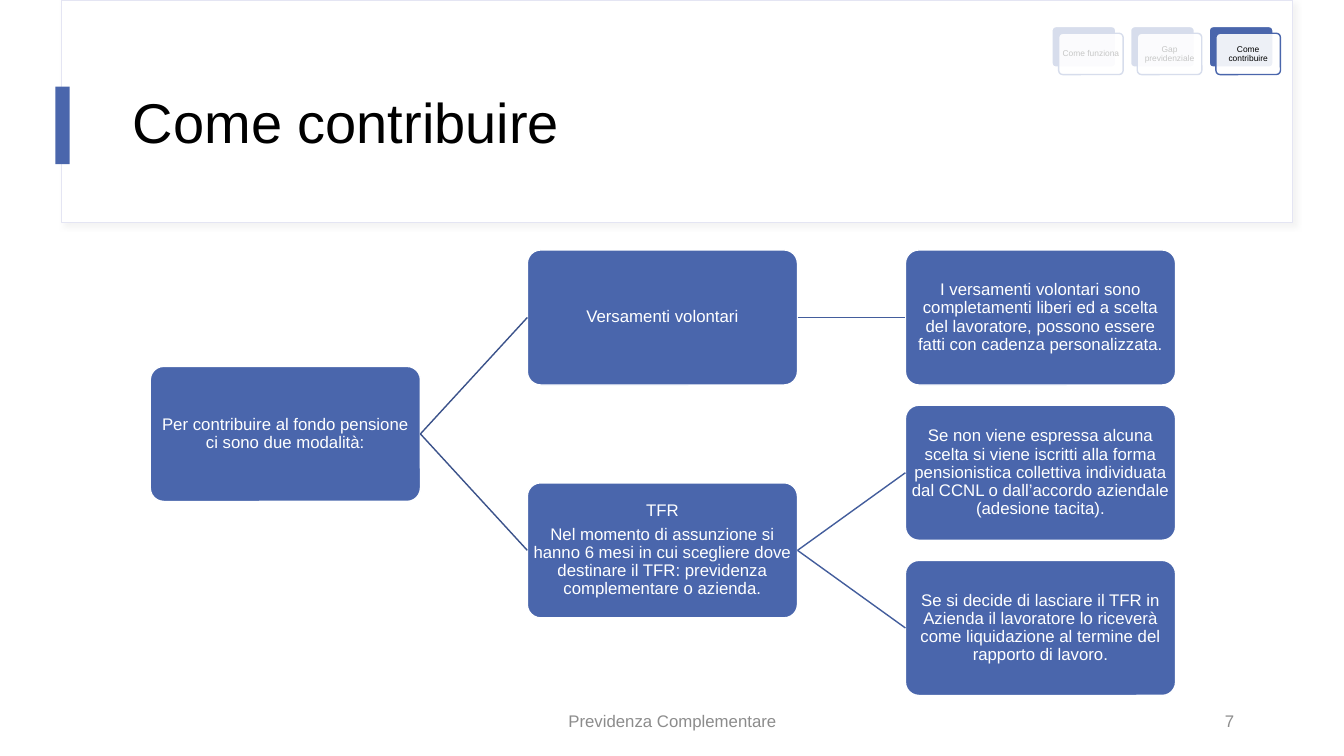
import dataclasses
import typing

import lxml.etree
import pptx
import pptx.dml.color
import pptx.enum.shapes
import pptx.enum.text
import pptx.oxml
import pptx.oxml.ns
import pptx.util

Inches = pptx.util.Inches
Shapes = pptx.enum.shapes.MSO_SHAPE
Align = pptx.enum.text.PP_ALIGN


@dataclasses.dataclass(frozen=True)
class Theme:
    font: str = "Arial"
    blue: str = "4A66AC"
    white: str = "FFFFFF"
    black: str = "000000"
    gray: str = "8C8C8C"
    frame: str = "E4E5F3"
    shadow: str = "D9D9D9"
    first_link: str = "3B528A"
    second_link: str = "435D9C"
    title_size: float = 40
    body_size: float = 12
    tab_size: float = 6


@dataclasses.dataclass(frozen=True)
class Box:
    left: float
    top: float
    width: float
    height: float

    def lengths(self) -> tuple[int, ...]:
        return tuple(Inches(value) for value in dataclasses.astuple(self))


@dataclasses.dataclass(frozen=True)
class Node:
    column: int
    row: float
    paragraphs: tuple[str, ...]
    parent: typing.Optional[int] = None


THEME = Theme()
COLUMN_LEFTS = (1.49, 5.23, 8.98)
LINK_COLORS = (THEME.first_link, THEME.second_link)
NODE_TOP, ROW_PITCH = 2.48, 1.54
NODE_WIDTH, NODE_HEIGHT = 2.68, 1.34
TAB_LEFT, TAB_TOP, TAB_PITCH = 10.43, 0.26, 0.78
TAB_WIDTH, TAB_HEIGHT, TAB_OFFSET = 0.64, 0.41, 0.07
TABS = ("Come funziona", "Gap previdenziale", "Come contribuire")
NODES = (
    Node(0, 0.75, ("Per contribuire al fondo pensione ci sono due modalità:",)),
    Node(1, 0, ("Versamenti volontari",), 0),
    Node(1, 1.5, (
        "TFR",
        "Nel momento di assunzione si hanno 6 mesi in cui scegliere dove "
        "destinare il TFR: previdenza complementare o azienda.",
    ), 0),
    Node(2, 0, (
        "I versamenti volontari sono completamenti liberi ed a scelta del "
        "lavoratore, possono essere fatti con cadenza personalizzata.",
    ), 1),
    Node(2, 1, (
        "Se non viene espressa alcuna scelta si viene iscritti alla forma "
        "pensionistica collettiva individuata dal CCNL o dall’accordo "
        "aziendale (adesione tacita).",
    ), 2),
    Node(2, 2, (
        "Se si decide di lasciare il TFR in Azienda il lavoratore lo riceverà "
        "come liquidazione al termine del rapporto di lavoro.",
    ), 2),
)


def rgb(color: str) -> pptx.dml.color.RGBColor:
    return pptx.dml.color.RGBColor.from_string(color)


def set_text(shape, paragraphs: tuple[str, ...], *, size: float, color: str,
             align=Align.CENTER, inset: typing.Optional[float] = None,
             line_spacing: float = 1.0, space_after: float = 0) -> None:
    frame = shape.text_frame
    frame.word_wrap = True
    frame.vertical_anchor = pptx.enum.text.MSO_ANCHOR.MIDDLE
    if inset is not None:
        frame.margin_left = frame.margin_right = Inches(inset)
        frame.margin_top = frame.margin_bottom = Inches(inset)
    for index, text in enumerate(paragraphs):
        paragraph = frame.add_paragraph() if index else frame.paragraphs[0]
        paragraph.alignment = align
        paragraph.line_spacing = line_spacing
        if index < len(paragraphs) - 1:
            paragraph.space_after = pptx.util.Pt(space_after)
        run = paragraph.add_run()
        run.text = text
        run.font.name = THEME.font
        run.font.size = pptx.util.Pt(size)
        run.font.color.rgb = rgb(color)


def add_box(slide, box: Box, fill: str, *, kind=Shapes.RECTANGLE,
            line: typing.Optional[str] = None, line_width: float = 1,
            opacity: int = 100):
    shape = slide.shapes.add_shape(kind, *box.lengths())
    shape.shadow.inherit = False
    if kind == Shapes.ROUNDED_RECTANGLE:
        shape.adjustments[0] = 0.1
    shape.fill.solid()
    shape.fill.fore_color.rgb = rgb(fill)
    if opacity < 100:
        color = shape.fill._xPr.find(".//" + pptx.oxml.ns.qn("a:srgbClr"))
        alpha = lxml.etree.SubElement(color, pptx.oxml.ns.qn("a:alpha"))
        alpha.set("val", str(opacity * 1000))
    if line:
        shape.line.color.rgb = rgb(line)
        shape.line.width = pptx.util.Pt(line_width)
    else:
        shape.line.fill.background()
    return shape


def add_label(slide, box: Box, text: str, **text_format) -> None:
    set_text(slide.shapes.add_textbox(*box.lengths()), (text,), **text_format)


def add_header(slide) -> None:
    frame = add_box(slide, Box(0.61, 0, 12.21, 2.21), THEME.white,
                    line=THEME.frame, line_width=0.75)
    effects = frame._element.spPr.find(pptx.oxml.ns.qn("a:effectLst"))
    effects.append(pptx.oxml.parse_xml(
        f'<a:outerShdw {pptx.oxml.ns.nsdecls("a")} blurRad="{pptx.util.Pt(4)}" '
        f'dist="{pptx.util.Pt(3)}" dir="2700000" algn="tl" rotWithShape="0">'
        f'<a:srgbClr val="{THEME.shadow}"><a:alpha val="30000"/></a:srgbClr>'
        '</a:outerShdw>'))
    add_box(slide, Box(0.55, 0.86, 0.14, 0.77), THEME.blue)
    add_label(slide, Box(1.22, 0.6, 11.12, 1.29), "Come contribuire",
              size=THEME.title_size, color=THEME.black, align=Align.LEFT,
              line_spacing=0.9)


def add_link(slide, parent, child, color: str) -> None:
    connector = slide.shapes.add_connector(
        pptx.enum.shapes.MSO_CONNECTOR.STRAIGHT, 0, 0, 0, 0)
    connector.begin_connect(parent, 3)
    connector.end_connect(child, 1)
    connector.line.color.rgb = rgb(color)
    connector.line.width = pptx.util.Pt(1)
    lxml.etree.SubElement(connector._element.spPr,
                          pptx.oxml.ns.qn("a:effectLst"))


def add_tree(slide) -> None:
    shapes = []
    for node in NODES:
        box = Box(COLUMN_LEFTS[node.column], NODE_TOP + node.row * ROW_PITCH,
                  NODE_WIDTH, NODE_HEIGHT)
        shape = add_box(slide, box, THEME.blue, line=THEME.white,
                        kind=Shapes.ROUNDED_RECTANGLE)
        set_text(shape, node.paragraphs, size=THEME.body_size,
                 color=THEME.white, inset=0.01, line_spacing=0.9,
                 space_after=4.2)
        shapes.append(shape)
        if node.parent is not None:
            add_link(slide, shapes[node.parent], shape,
                     LINK_COLORS[node.column - 1])


def add_tabs(slide) -> None:
    for index, text in enumerate(TABS):
        left = TAB_LEFT + index * TAB_PITCH
        add_box(slide, Box(left, TAB_TOP, TAB_WIDTH, TAB_HEIGHT), THEME.blue,
                kind=Shapes.ROUNDED_RECTANGLE, line=THEME.white,
                line_width=1.5)
        card = add_box(slide, Box(left + TAB_OFFSET, TAB_TOP + TAB_OFFSET,
                                  TAB_WIDTH, TAB_HEIGHT), THEME.white,
                       kind=Shapes.ROUNDED_RECTANGLE, line=THEME.blue,
                       opacity=90)
        set_text(card, (text,), size=THEME.tab_size, color=THEME.black,
                 inset=0.02, line_spacing=0.9)
    add_box(slide, Box(10.39, 0.22, 1.57, 0.57), THEME.white, opacity=78)


def main() -> None:
    presentation = pptx.Presentation()
    presentation.slide_width = Inches(13.33)
    presentation.slide_height = Inches(7.5)
    slide = presentation.slides.add_slide(presentation.slide_layouts[6])
    add_header(slide)
    add_tree(slide)
    add_label(slide, Box(4.42, 6.95, 4.5, 0.4), "Previdenza Complementare",
              size=THEME.body_size, color=THEME.gray)
    add_label(slide, Box(9.34, 6.95, 3, 0.4), "7", size=THEME.body_size,
              color=THEME.gray, align=Align.RIGHT)
    add_tabs(slide)
    presentation.save("out.pptx")


if __name__ == "__main__":
    main()
